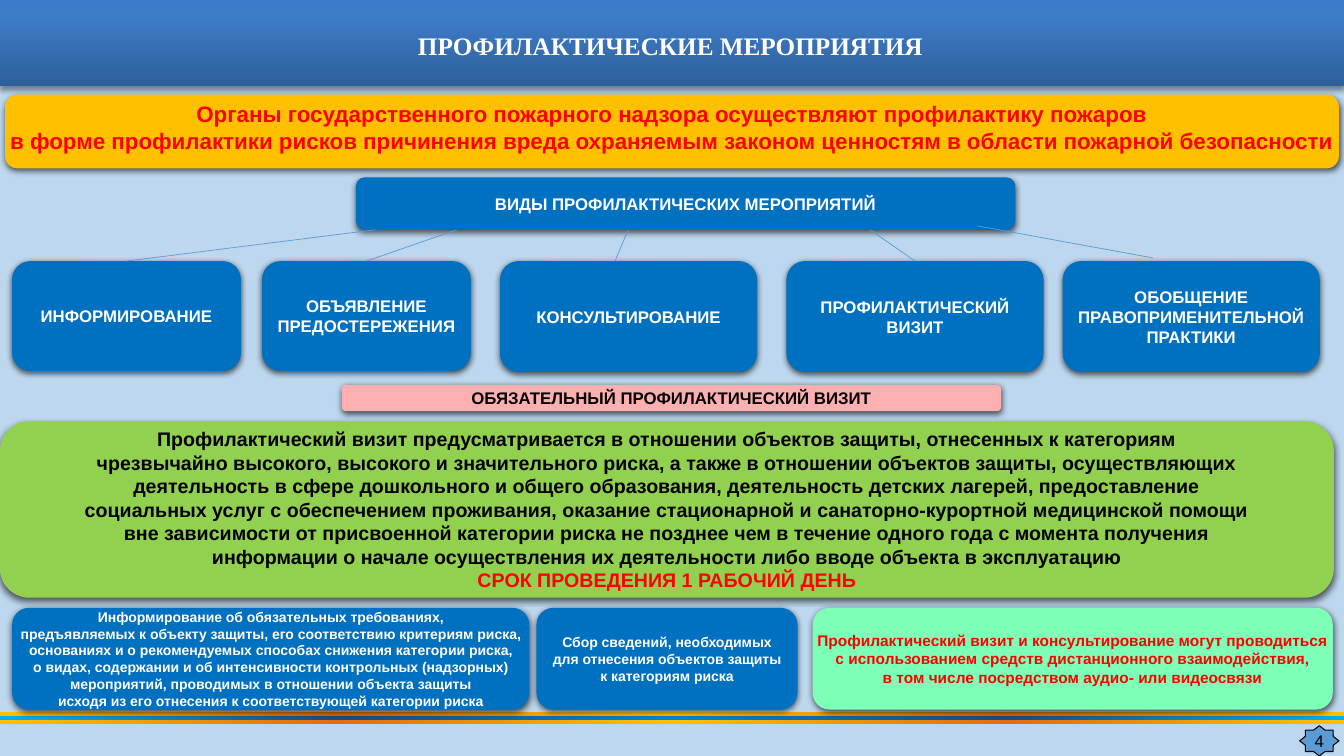
from pptx import Presentation
from pptx.dml.color import RGBColor
from pptx.enum.shapes import MSO_CONNECTOR, MSO_SHAPE
from pptx.enum.text import MSO_ANCHOR, PP_ALIGN
from pptx.oxml import parse_xml
from pptx.oxml.ns import nsdecls
from pptx.util import Inches, Pt

WIDTH, HEIGHT = 13.33, 7.5
BLUE, WHITE, BLACK, RED = "0070C0", "FFFFFF", "000000", "FF0000"
LINE_BLUE = "5B9BD5"
TYPES_BOX = (3.53, 1.76, 6.54, 0.52)
INSETS = (0.11, 0.06, 0.11, 0.06)


def color(value):
    return RGBColor.from_string(value)


def add_effects(shape, content=""):
    shape._element.spPr.append(
        parse_xml(f"<a:effectLst {nsdecls('a')}>{content}</a:effectLst>"))


def add_shadow(shape, alpha=63, blur=4.5, distance=1.5):
    add_effects(shape, f'<a:outerShdw blurRad="{Pt(blur)}" dist="{Pt(distance)}" '
                       f'dir="5400000" rotWithShape="0"><a:srgbClr val="000000">'
                       f'<a:alpha val="{alpha * 1000}"/></a:srgbClr></a:outerShdw>')


def set_gradient(shape, stops, angle):
    """Fill with (percent, colour) stops along an angle in degrees."""
    marks = "".join(f'<a:gs pos="{share * 1000}"><a:srgbClr val="{value}"/></a:gs>'
                    for share, value in stops)
    shape.fill.solid()
    properties = shape._element.spPr
    solid = properties.find("{http://schemas.openxmlformats.org/drawingml/2006/main}solidFill")
    properties.replace(solid, parse_xml(
        f'<a:gradFill {nsdecls("a")} rotWithShape="1"><a:gsLst>{marks}</a:gsLst>'
        f'<a:lin ang="{angle * 60000}" scaled="0"/></a:gradFill>'))


def add_plain(slide, kind, box):
    shape = slide.shapes.add_shape(kind, *map(Inches, box))
    shape.line.fill.background()
    return shape


def write(shape, lines, size, ink, insets=INSETS, font="Arial", bold=True, last_ink=None):
    """Centre the lines; last_ink recolours the final one."""
    frame = shape.text_frame
    layout = dict(zip(("margin_left", "margin_top", "margin_right", "margin_bottom"),
                      map(Inches, insets)))
    layout.update(word_wrap=False, vertical_anchor=MSO_ANCHOR.MIDDLE)
    for name, value in layout.items():
        setattr(frame, name, value)
    for number, line in enumerate(lines):
        para = frame.add_paragraph() if number else frame.paragraphs[0]
        para.alignment = PP_ALIGN.CENTER
        span = para.add_run()
        span.text = line
        for name, value in {"name": font, "size": Pt(size), "bold": bold}.items():
            setattr(span.font, name, value)
        is_last = number == len(lines) - 1
        span.font.color.rgb = color(last_ink if last_ink and is_last else ink)


def add_card(slide, box, lines, size=12, fill=BLUE, ink=WHITE, **options):
    card = add_plain(slide, MSO_SHAPE.FLOWCHART_ALTERNATE_PROCESS, box)
    card.fill.solid()
    card.fill.fore_color.rgb = color(fill)
    add_shadow(card)
    write(card, lines, size, ink, **options)
    return card


def add_header(slide, box):
    band = add_plain(slide, MSO_SHAPE.RECTANGLE, box)
    set_gradient(band, [(0, "2F5F99"), (80, "3D7CC7"), (100, "3A7CCB")], 270)
    add_shadow(band, alpha=40, blur=4, distance=3)
    left, top, width, height = box
    title = slide.shapes.add_textbox(
        *map(Inches, (left + 0.74, top + 0.11, width - 1.51, height - 0.11)))
    write(title, ["ПРОФИЛАКТИЧЕСКИЕ МЕРОПРИЯТИЯ"], 18, WHITE,
          insets=(0.07, 0.03, 0.07, 0.03), font="Times New Roman")
    title.text_frame.paragraphs[0].line_spacing = 0.8


def add_footer(slide, box):
    left, top, width, height = box
    gold = ("FFC000", "E46C0A", "FFC000", "E46C0A", "FFC000")
    azure = ("00B0F0", "1F497D", "0084CF", "1F497D", "00B0F0")
    for row, shades in enumerate((gold, azure, gold)):
        stripe = add_plain(slide, MSO_SHAPE.RECTANGLE, (left, top + row * 0.04, width, 0.04))
        set_gradient(stripe, [(25 * step, shade) for step, shade in enumerate(shades)], 0)
        add_effects(stripe)
    star = slide.shapes.add_shape(
        MSO_SHAPE.STAR_8_POINT,
        *map(Inches, (left + width - 0.44, top + height - 0.3, 0.39, 0.3)))
    star.adjustments[0] = 0.383
    star.shadow.inherit = False
    star.fill.solid()
    star.fill.fore_color.rgb = color(LINE_BLUE)
    star.line.color.rgb = color(BLACK)
    star.line.width = Pt(0.75)
    write(star, ["4"], 12, BLACK, insets=(0.09, 0.04, 0.09, 0.04), bold=False)


def add_types(slide, box):
    """Heading card with a row of activity cards joined to it."""
    left, top, width, height = box
    add_card(slide, box, ["ВИДЫ ПРОФИЛАКТИЧЕСКИХ МЕРОПРИЯТИЙ"])
    row_top, bottom = top + 0.83, top + height
    # card left, width, height; line start; line end where it is off the middle
    activities = [
        (0.12, 2.27, 1.09, (3.72, bottom), None, ["ИНФОРМИРОВАНИЕ"]),
        (2.6, 2.07, 1.09, (4.53, bottom), None, ["ОБЪЯВЛЕНИЕ", "ПРЕДОСТЕРЕЖЕНИЯ"]),
        (4.96, 2.55, 1.1, (6.23, bottom), (6.1, row_top), ["КОНСУЛЬТИРОВАНИЕ"]),
        (7.8, 2.55, 1.1, (8.63, bottom), None, ["ПРОФИЛАКТИЧЕСКИЙ", "ВИЗИТ"]),
        (10.54, 2.55, 1.1, (9.69, bottom - 0.04), (11.44, row_top - 0.03),
         ["ОБОБЩЕНИЕ", "ПРАВОПРИМЕНИТЕЛЬНОЙ", "ПРАКТИКИ"]),
    ]
    for card_left, card_width, card_height, start, end, lines in activities:
        card = add_card(slide, (card_left, row_top, card_width, card_height), lines)
        target = end or (card_left + card_width / 2, row_top)
        link = slide.shapes.add_connector(
            MSO_CONNECTOR.STRAIGHT, *map(Inches, (*start, *target)))
        if end is None:
            link.end_connect(card, 0)
        link.line.color.rgb = color(LINE_BLUE)
        link.line.width = Pt(0.5)
        add_effects(link)


def add_visit(slide, box):
    left, top, width, height = box
    add_card(slide, (left + 3.39, top, 6.54, 0.26),
             ["ОБЯЗАТЕЛЬНЫЙ ПРОФИЛАКТИЧЕСКИЙ ВИЗИТ"], fill="FFAFAF", ink=BLACK)
    add_card(slide, (left, top + 0.36, width, height - 0.36), [
        "Профилактический визит предусматривается в отношении объектов защиты, отнесенных к категориям",
        "чрезвычайно высокого, высокого и значительного риска, а также в отношении объектов защиты, осуществляющих",
        "деятельность в сфере дошкольного и общего образования, деятельность детских лагерей, предоставление",
        "социальных услуг с обеспечением проживания, оказание стационарной и санаторно-курортной медицинской помощи",
        "вне зависимости от присвоенной категории риска не позднее чем в течение одного года с момента получения",
        "информации о начале осуществления их деятельности либо вводе объекта в эксплуатацию",
        "СРОК ПРОВЕДЕНИЯ 1 РАБОЧИЙ ДЕНЬ",
    ], size=14, fill="92D050", ink=BLACK, last_ink=RED)


def add_details(slide, box):
    left, top, width, height = box
    add_card(slide, (left, top, 5.13, height), [
        "Информирование об обязательных требованиях,",
        "предъявляемых к объекту защиты, его соответствию критериям риска,",
        "основаниях и о рекомендуемых способах снижения категории риска,",
        "о видах, содержании и об интенсивности контрольных (надзорных)",
        "мероприятий, проводимых в отношении объекта защиты",
        "исходя из его отнесения к соответствующей категории риска",
    ], size=10)
    add_card(slide, (left + 5.2, top, 2.59, height), [
        "Сбор сведений, необходимых",
        "для отнесения объектов защиты",
        "к категориям риска",
    ], size=10)
    add_card(slide, (left + width - 5.16, top, 5.16, height), [
        "Профилактический визит и консультирование могут проводиться",
        "с использованием средств дистанционного взаимодействия,",
        "в том числе посредством аудио- или видеосвязи",
    ], size=11, fill="7DFFB8", ink=RED)


def main():
    deck = Presentation()
    deck.slide_width, deck.slide_height = Inches(WIDTH), Inches(HEIGHT)
    page = deck.slides.add_slide(deck.slide_layouts[6])
    page.background.fill.solid()
    page.background.fill.fore_color.rgb = color("BDD7EE")
    add_header(page, (0, 0, WIDTH, 0.85))
    add_footer(page, (0, 7.06, WIDTH, 0.44))
    add_card(page, (0.05, 0.94, 13.23, 0.73), [
        "Органы государственного пожарного надзора осуществляют профилактику пожаров",
        "в форме профилактики рисков причинения вреда охраняемым законом ценностям в области пожарной безопасности",
    ], size=16, fill="FFC000", ink=RED, insets=(0.11, 0.02, 0.11, 0.1))
    add_types(page, TYPES_BOX)
    add_visit(page, (0, 3.82, 13.23, 2.11))
    add_details(page, (0.12, 6.03, 13.1, 1.01))
    deck.save("out.pptx")


if __name__ == "__main__":
    main()
